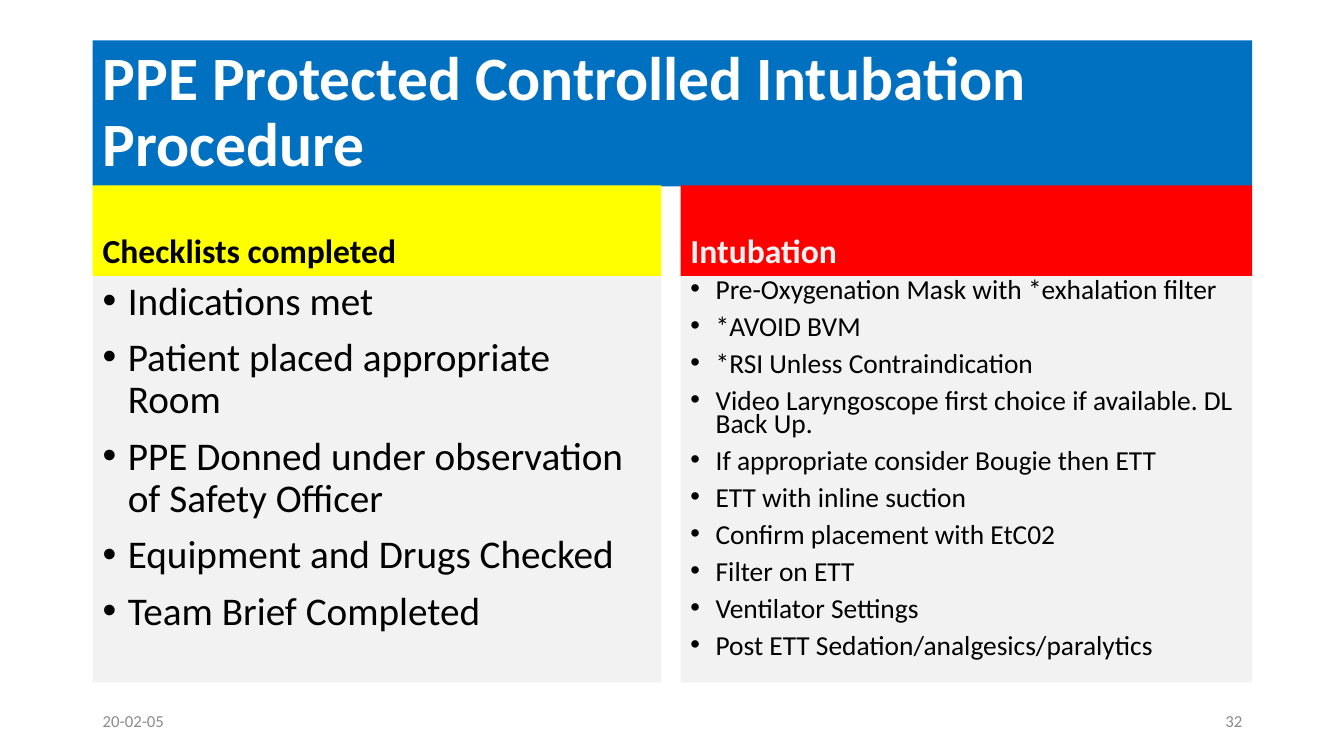
import pptx
import pptx.dml.color
import pptx.enum.text
import pptx.oxml.ns
import pptx.util
from lxml import etree

ANCHOR = pptx.enum.text.MSO_ANCHOR
ALIGN = pptx.enum.text.PP_ALIGN
Inches = pptx.util.Inches


def color(hex_string):
    """Turn a hex string into a colour."""
    return pptx.dml.color.RGBColor.from_string(hex_string)


class SlideBuilder:
    """Hold the style and the slide, and add its elements."""

    font_name = "Calibri"
    body_spacing = {"line_spacing": 0.9, "space_before": pptx.util.Pt(10)}

    def __init__(self, slide):
        """Keep the slide to draw on."""
        self.slide = slide

    def add_text(self, box, lines, size, text_color, fill=None, bold=False,
                 anchor=ANCHOR.MIDDLE, paragraph_format=None):
        """Add a text box with one paragraph per line."""
        shape = self.slide.shapes.add_textbox(*map(Inches, box))
        if fill:
            shape.fill.solid()
            shape.fill.fore_color.rgb = color(fill)
        frame = shape.text_frame
        frame.word_wrap = True
        frame.vertical_anchor = anchor
        frame.text = "\n".join(lines)
        font_format = {"name": self.font_name, "size": pptx.util.Pt(size), "bold": bold}
        for paragraph in frame.paragraphs:
            for name, value in (paragraph_format or {}).items():
                setattr(paragraph, name, value)
            for run in paragraph.runs:
                for name, value in font_format.items():
                    setattr(run.font, name, value)
                run.font.color.rgb = color(text_color)
        return frame

    def add_heading(self, box, text, text_color, fill):
        """Add a coloured column heading."""
        self.add_text(box, [text], 24, text_color, fill, True, ANCHOR.BOTTOM, self.body_spacing)

    def add_bullets(self, box, lines, size, line_spacing):
        """Add a bulleted list on a grey panel."""
        spacing = {**self.body_spacing, "line_spacing": line_spacing}
        frame = self.add_text(box, lines, size, "000000", "F2F2F2",
                              anchor=ANCHOR.TOP, paragraph_format=spacing)
        indent = Inches(0.25)
        for paragraph in frame.paragraphs:
            properties = paragraph._p.get_or_add_pPr()
            properties.set("marL", str(indent))
            properties.set("indent", str(-indent))
            bullet_font = etree.SubElement(properties, pptx.oxml.ns.qn("a:buFont"))
            bullet_font.set("typeface", "Arial")
            bullet = etree.SubElement(properties, pptx.oxml.ns.qn("a:buChar"))
            bullet.set("char", "•")


def main():
    """Build the intubation procedure slide and save it."""
    presentation = pptx.Presentation()
    presentation.slide_width = Inches(13.33)
    presentation.slide_height = Inches(7.5)
    builder = SlideBuilder(presentation.slides.add_slide(presentation.slide_layouts[6]))

    left = 0.92
    builder.add_text((left, 0.4, 11.5, 1.45), ["PPE Protected Controlled Intubation Procedure"],
                     44, "FFFFFF", "0070C0", True, paragraph_format={"line_spacing": 0.9})

    checklist = [
        "Indications met",
        "Patient placed appropriate Room",
        "PPE Donned under observation of Safety Officer",
        "Equipment and Drugs Checked",
        "Team Brief Completed",
    ]
    intubation = [
        "Pre-Oxygenation Mask with *exhalation filter",
        "*AVOID BVM",
        "*RSI Unless Contraindication",
        "Video Laryngoscope first choice if available. DL Back Up.",
        "If appropriate consider Bougie then ETT",
        "ETT with inline suction",
        "Confirm placement with EtC02",
        "Filter on ETT",
        "Ventilator Settings",
        "Post ETT Sedation/analgesics/paralytics",
    ]
    columns = [
        (left, 5.64, "Checklists completed", "000000", "FFFF00", checklist, 28, 0.9),
        (6.75, 5.67, "Intubation", "F2F2F2", "FF0000", intubation, 19.6, 0.7),
    ]
    for x, width, heading, text_color, fill, lines, size, line_spacing in columns:
        builder.add_heading((x, 1.84, width, 0.9), heading, text_color, fill)
        builder.add_bullets((x, 2.74, width, 4.03), lines, size, line_spacing)

    footers = [(left, "20-02-05", ALIGN.LEFT), (9.42, "32", ALIGN.RIGHT)]
    for x, text, alignment in footers:
        builder.add_text((x, 6.95, 3, 0.4), [text], 12, "8C8C8C",
                         paragraph_format={"alignment": alignment})

    presentation.save("out.pptx")


if __name__ == "__main__":
    main()
